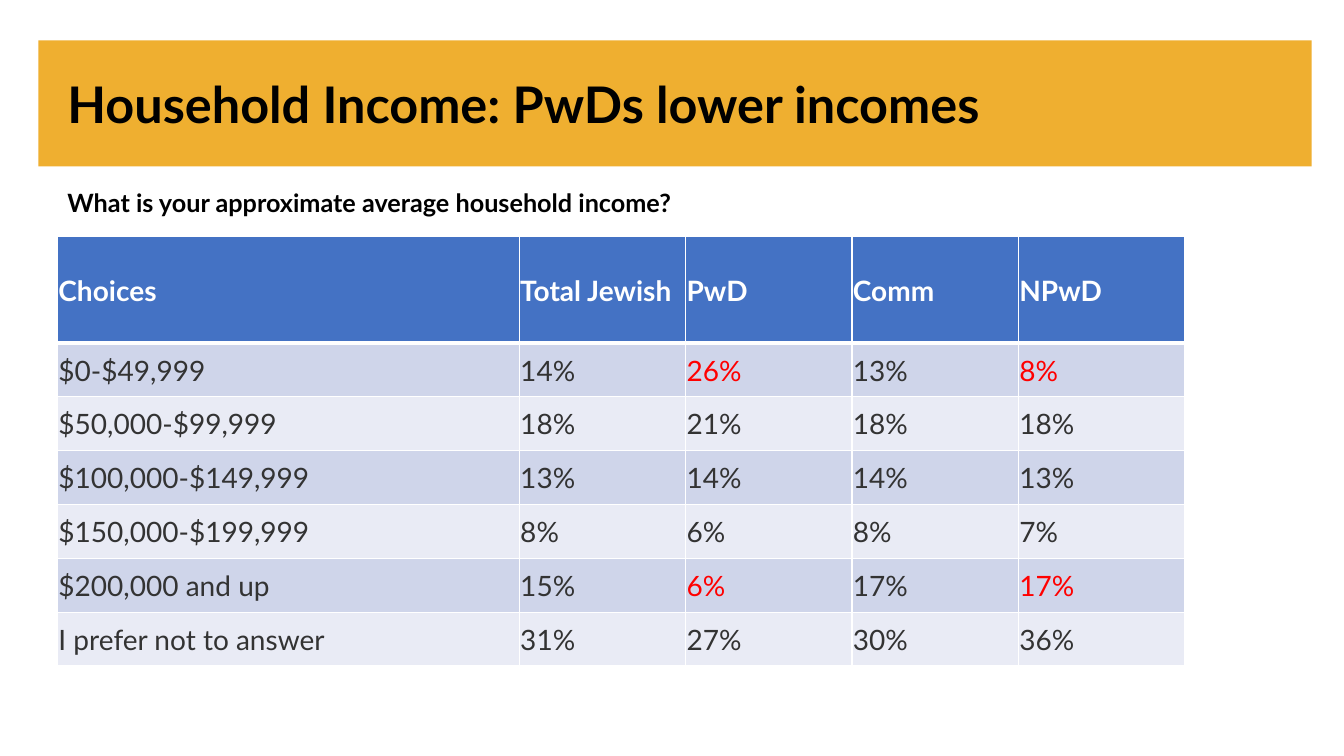
from lxml.etree import SubElement
from pptx import Presentation
from pptx.dml.color import RGBColor
from pptx.enum.shapes import MSO_SHAPE
from pptx.enum.text import MSO_ANCHOR
from pptx.oxml.ns import qn
from pptx.util import Inches, Pt

# Content
TITLE = "Household Income: PwDs lower incomes"
QUESTION = "What is your approximate average household income?"
ROWS = [
    ("Choices", "Total Jewish", "PwD", "Comm", "NPwD"),
    ("$0-$49,999", "14%", "26%", "13%", "8%"),
    ("$50,000-$99,999", "18%", "21%", "18%", "18%"),
    ("$100,000-$149,999", "13%", "14%", "14%", "13%"),
    ("$150,000-$199,999", "8%", "6%", "8%", "7%"),
    ("$200,000 and up", "15%", "6%", "17%", "17%"),
    ("I prefer not to answer", "31%", "27%", "30%", "36%"),
]
MARKED = {(1, 2), (1, 4), (5, 2), (5, 4)}  # row, column of red values

# Look
FONT = "Lato"
COLORS = {
    "banner": "EFAF30", "title": "000000", "head": "4472C4",
    "odd": "CFD5EA", "even": "E9EBF5", "body": "333333",
    "mark": "FF0000", "white": "FFFFFF",
}
LEFT = 0.57
WIDTHS = [4.58] + [1.65] * 4
HEIGHTS = [1.05] + [0.535] * 6


def color(name):
    return RGBColor.from_string(COLORS[name])


def style(frame, size, name, bold):
    for run in frame.paragraphs[0].runs:
        font = run.font
        font.name, font.size, font.bold = FONT, Pt(size), bold
        font.color.rgb = color(name)


def add_text(slide, text, top, height, size, anchor):
    box = slide.shapes.add_textbox(
        Inches(LEFT), Inches(top), Inches(11.62), Inches(height))
    frame = box.text_frame
    frame.word_wrap = True
    frame.vertical_anchor = anchor
    frame.text = text
    style(frame, size, "title", True)


def add_border(cell, side, width):
    line = SubElement(cell._tc.get_or_add_tcPr(), qn("a:" + side), w=str(Pt(width)))
    fill = SubElement(line, qn("a:solidFill"))
    SubElement(fill, qn("a:srgbClr"), val=COLORS["white"])


def fill_cell(cell, text, row, col):
    head = row == 0
    cell.text = text
    cell.vertical_anchor = MSO_ANCHOR.MIDDLE
    cell.margin_left = cell.margin_right = cell.margin_top = Inches(0.01)
    cell.margin_bottom = 0
    for side in ("lnL", "lnR", "lnT", "lnB"):
        thick = (head and side == "lnB") or (row == 1 and side == "lnT")
        add_border(cell, side, 3 if thick else 1)
    cell.fill.solid()
    cell.fill.fore_color.rgb = color("head" if head else "odd" if row % 2 else "even")
    ink = "white" if head else "mark" if (row, col) in MARKED else "body"
    style(cell.text_frame, 20, ink, head)


def main():
    deck = Presentation()
    deck.slide_width, deck.slide_height = Inches(13.33), Inches(7.5)
    slide = deck.slides.add_slide(deck.slide_layouts[6])

    # Title banner and question
    banner = slide.shapes.add_shape(
        MSO_SHAPE.RECTANGLE, Inches(0.38), Inches(0.4), Inches(12.63), Inches(1.25))
    banner.shadow.inherit = False
    banner.fill.solid()
    banner.fill.fore_color.rgb = color("banner")
    banner.line.fill.background()
    add_text(slide, TITLE, 0.4, 1.25, 36, MSO_ANCHOR.MIDDLE)
    add_text(slide, QUESTION, 1.81, 0.4, 18, MSO_ANCHOR.TOP)

    # Income table
    table = slide.shapes.add_table(
        len(ROWS), len(WIDTHS), Inches(LEFT), Inches(2.35),
        Inches(sum(WIDTHS)), Inches(sum(HEIGHTS))).table
    for column, width in zip(table.columns, WIDTHS):
        column.width = Inches(width)
    for line, height in zip(table.rows, HEIGHTS):
        line.height = Inches(height)
    for row, values in enumerate(ROWS):
        for col, text in enumerate(values):
            fill_cell(table.cell(row, col), text, row, col)

    deck.save("out.pptx")


if __name__ == "__main__":
    main()
